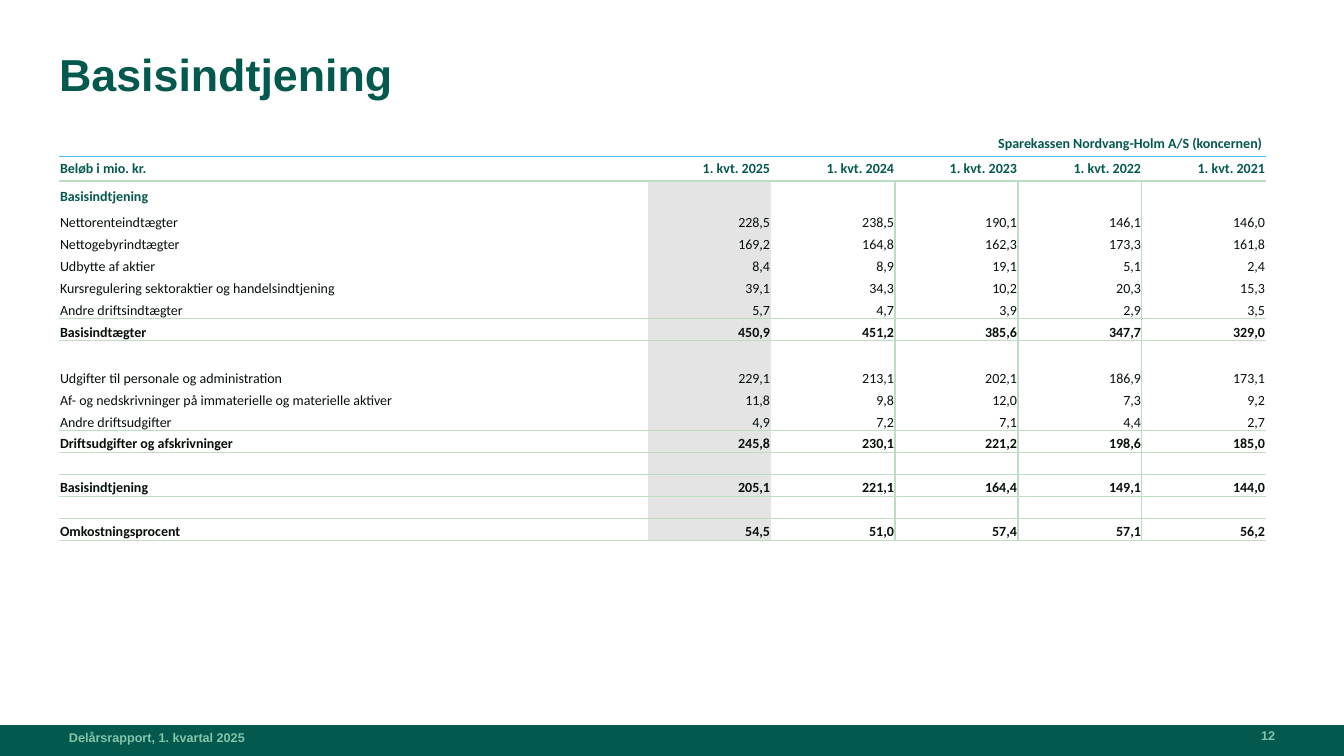
from dataclasses import dataclass

from lxml.etree import SubElement
from pptx import Presentation
from pptx.dml.color import RGBColor
from pptx.enum.shapes import MSO_SHAPE as Shape
from pptx.enum.text import MSO_ANCHOR as Anchor, PP_ALIGN as Align
from pptx.oxml.ns import qn
from pptx.util import Pt

SCALE = 12192000 / 1344
GREEN = RGBColor(0x04, 0x59, 0x4F)
MINT = RGBColor(0x82, 0xC5, 0xA9)
LINE = RGBColor(0xBC, 0xDD, 0xC4)
CYAN = RGBColor(0x4E, 0xC2, 0xEB)
GREY = RGBColor(0xE4, 0xE4, 0xE4)
INK = RGBColor(0x08, 0x10, 0x0A)
PLAIN_STYLE = "{2D5ABB26-0587-4C30-8999-92F81FD0307C}"
LABEL_WIDTH, VALUES_WIDTH, PERIODS = 589, 618, 5


@dataclass
class Row:
    label: str = ""
    values: str = ""
    height: int = 22
    bold: bool = False
    color: RGBColor = INK
    ruled: bool = False  # line below the row


@dataclass
class Note:
    text: str
    left: int
    top: int
    width: int
    align: Align


ROWS = [
    Row("Sparekassen Nordvang-Holm A/S (koncernen)", "", 25, True, GREEN, True),
    Row("Beløb i mio. kr.",
        "1. kvt. 2025|1. kvt. 2024|1. kvt. 2023|1. kvt. 2022|1. kvt. 2021",
        25, True, GREEN, True),
    Row("Basisindtjening", "", 28, True, GREEN),
    Row("Nettorenteindtægter", "228,5|238,5|190,1|146,1|146,0"),
    Row("Nettogebyrindtægter", "169,2|164,8|162,3|173,3|161,8"),
    Row("Udbytte af aktier", "8,4|8,9|19,1|5,1|2,4"),
    Row("Kursregulering sektoraktier og handelsindtjening",
        "39,1|34,3|10,2|20,3|15,3"),
    Row("Andre driftsindtægter", "5,7|4,7|3,9|2,9|3,5", ruled=True),
    Row("Basisindtægter", "450,9|451,2|385,6|347,7|329,0", bold=True, ruled=True),
    Row(height=24),
    Row("Udgifter til personale og administration",
        "229,1|213,1|202,1|186,9|173,1"),
    Row("Af- og nedskrivninger på immaterielle og materielle aktiver",
        "11,8|9,8|12,0|7,3|9,2"),
    Row("Andre driftsudgifter", "4,9|7,2|7,1|4,4|2,7", ruled=True),
    Row("Driftsudgifter og afskrivninger", "245,8|230,1|221,2|198,6|185,0",
        bold=True, ruled=True),
    Row(ruled=True),
    Row("Basisindtjening", "205,1|221,1|164,4|149,1|144,0", bold=True, ruled=True),
    Row(ruled=True),
    Row("Omkostningsprocent", "54,5|51,0|57,4|57,1|56,2", bold=True, ruled=True),
]
NOTES = [
    Note("12", 1149, 715, 126, Align.RIGHT),
    Note("Delårsrapport, 1. kvartal 2025", 69, 717, 496, Align.LEFT),
]


def emu(px: int) -> int:
    return round(px * SCALE)


def box(*sides: int) -> list[int]:
    return [emu(side) for side in sides]


def inset(item, left: int, top: int, right: int, bottom: int) -> None:
    """Set the margins of a cell or a text frame."""
    item.margin_left, item.margin_top = emu(left), emu(top)
    item.margin_right, item.margin_bottom = emu(right), emu(bottom)


def write(frame, text: str, size: int, name: str, color: RGBColor,
          bold: bool, align: Align) -> None:
    frame.text = text
    para = frame.paragraphs[0]
    para.alignment = align
    for run in para.runs:
        font = run.font
        font.size, font.name, font.bold = Pt(size), name, bold
        font.color.rgb = color
    if not text:  # keeps empty cells low
        SubElement(para._p, qn("a:endParaRPr"), sz=str(size * 100))


def border(cell, side: str, color: RGBColor | None, width: float = 1) -> None:
    """Sides must come in the order L, R, T, B."""
    line = SubElement(cell._tc.get_or_add_tcPr(), qn(f"a:ln{side}"),
                      w=str(Pt(width)))
    if color is None:
        SubElement(line, qn("a:noFill"))
    else:
        fill = SubElement(line, qn("a:solidFill"))
        SubElement(fill, qn("a:srgbClr"), val=str(color))


def rule(cell, side: str, row: int) -> None:
    """Draw the line below the given row on one side of a cell."""
    if row < 0 or not ROWS[row].ruled:
        border(cell, side, None)
    elif row == 0:
        border(cell, side, CYAN, 0.25)
    else:
        border(cell, side, LINE)


def style(cell, row: int, col: int, text: str) -> None:
    data = ROWS[row]
    body = row > 1
    cell.vertical_anchor = Anchor.MIDDLE if row == 1 else Anchor.BOTTOM
    if row == 0:
        inset(cell, 0, 4, 4, 4)
    elif col == 0 and row < 3:
        inset(cell, 1, 4, 4, 4)
    else:
        inset(cell, 1, 1, 1, 0)
    align = Align.RIGHT if col or row == 0 else Align.LEFT
    write(cell.text_frame, text, 10, "Calibri", data.color, data.bold, align)
    border(cell, "L", LINE if body and col > 2 else None)
    border(cell, "R", LINE if body and 1 < col < PERIODS else None)
    rule(cell, "T", row - 1)
    rule(cell, "B", row)
    if body and col == 1:
        cell.fill.solid()
        cell.fill.fore_color.rgb = GREY
    else:
        cell.fill.background()


def draw_table(slide) -> None:
    height = sum(row.height for row in ROWS)
    table = slide.shapes.add_table(
        len(ROWS), PERIODS + 1,
        *box(59, 131, LABEL_WIDTH + VALUES_WIDTH, height)).table
    table.first_row = table.horz_banding = False
    table._tbl.tblPr.find(qn("a:tableStyleId")).text = PLAIN_STYLE
    edges = [VALUES_WIDTH * i // PERIODS for i in range(PERIODS + 1)]
    widths = [LABEL_WIDTH] + [b - a for a, b in zip(edges, edges[1:])]
    for col, width in enumerate(widths):
        table.columns[col].width = emu(width)
    table.cell(0, 0).merge(table.cell(0, PERIODS))
    for row, data in enumerate(ROWS):
        table.rows[row].height = emu(data.height)
        values = data.values.split("|") if data.values else [""] * PERIODS
        for col, text in enumerate([data.label, *values]):
            style(table.cell(row, col), row, col, text)


def draw_note(slide, note: Note) -> None:
    frame = slide.shapes.add_textbox(
        *box(note.left, note.top, note.width, 28)).text_frame
    frame.word_wrap = True
    frame.vertical_anchor = Anchor.BOTTOM
    inset(frame, 0, 0, 0, 0)
    write(frame, note.text, 9, "Arial", MINT, True, note.align)


def draw_title(slide) -> None:
    title = slide.shapes.title
    title.left, title.top, title.width, title.height = box(59, 53, 1207, 69)
    frame = title.text_frame
    frame.vertical_anchor = Anchor.TOP
    inset(frame, 0, 0, 0, 0)
    write(frame, "Basisindtjening", 32, "Arial", GREEN, True, Align.LEFT)
    frame.paragraphs[0].line_spacing = 0.9


def draw_band(slide) -> None:
    band = slide.shapes.add_shape(Shape.RECTANGLE, *box(0, 725, 1344, 31))
    band.shadow.inherit = False
    band.fill.solid()
    band.fill.fore_color.rgb = GREEN
    band.line.fill.background()


def main() -> None:
    deck = Presentation()
    deck.slide_width, deck.slide_height = box(1344, 756)
    slide = deck.slides.add_slide(deck.slide_layouts[5])
    draw_band(slide)
    draw_title(slide)
    draw_table(slide)
    for note in NOTES:
        draw_note(slide, note)
    deck.save("out.pptx")


if __name__ == "__main__":
    main()
